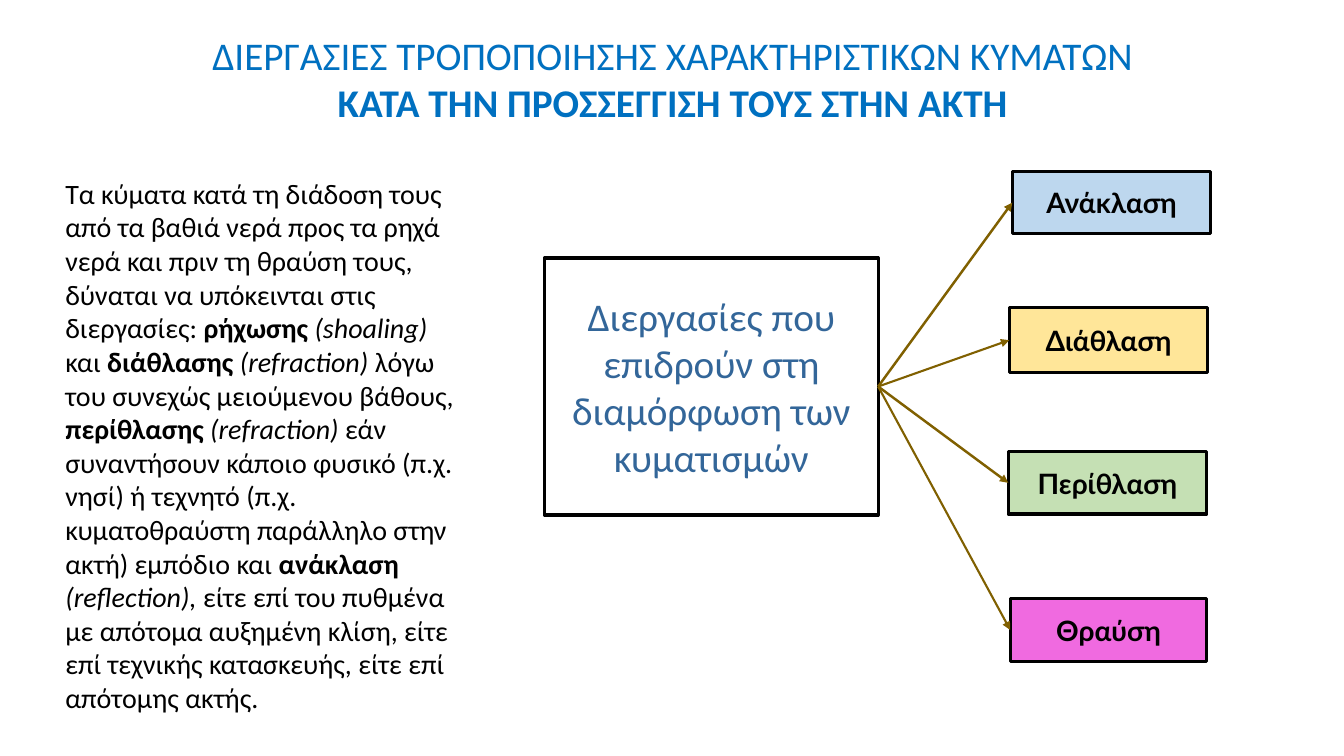
"""Build a slide on the processes that modify waves approaching the coast."""
from lxml.etree import SubElement
from pptx import Presentation
from pptx.dml.color import RGBColor
from pptx.enum.shapes import MSO_CONNECTOR as Connector, MSO_SHAPE as Shape
from pptx.enum.text import MSO_ANCHOR as Anchor, MSO_AUTO_SIZE as AutoSize, PP_ALIGN as Align
from pptx.oxml.ns import qn
from pptx.util import Inches, Pt

BLACK, BLUE, STEEL, BROWN, WHITE = "000000", "0070C0", "336699", "806000", "FFFFFF"
BODY_FONT, LABEL_FONT = "Calibri", "Lato"
RIGHT_SIDE, LEFT_SIDE = 3, 1

TITLE = [
    ("ΔΙΕΡΓΑΣΙΕΣ ΤΡΟΠΟΠΟΙΗΣΗΣ ΧΑΡΑΚΤΗΡΙΣΤΙΚΩΝ ΚΥΜΑΤΩΝ ", {}),
    ("ΚΑΤΑ ΤΗΝ ΠΡΟΣΣΕΓΓΙΣΗ ΤΟΥΣ ΣΤΗΝ ΑΚΤΗ", {"bold": True}),
]
EXPLANATION = [
    ("Τα κύματα κατά τη διάδοση τους από τα βαθιά νερά προς τα ρηχά νερά και πριν τη "
     "θραύση τους, δύναται να υπόκεινται στις διεργασίες: ", {}),
    ("ρήχωσης ", {"bold": True}),
    ("(shoaling) ", {"italic": True}),
    ("και ", {}),
    ("διάθλασης ", {"bold": True}),
    ("(refraction)", {"italic": True}),
    (" λόγω του συνεχώς μειούμενου βάθους, ", {}),
    ("περίθλασης ", {"bold": True}),
    ("(refraction)", {"italic": True}),
    (" εάν συναντήσουν κάποιο φυσικό (π.χ. νησί) ή τεχνητό (π.χ. κυματοθραύστη "
     "παράλληλο στην ακτή) εμπόδιο και ", {}),
    ("ανάκλαση ", {"bold": True}),
    ("(reflection), ", {"italic": True}),
    ("είτε επί του πυθμένα με απότομα αυξημένη κλίση, είτε επί τεχνικής κατασκευής, "
     "είτε επί απότομης ακτής.", {}),
]
CAUSE = "Διεργασίες που επιδρούν στη διαμόρφωση των κυματισμών"
PROCESSES = [
    ("Ανάκλαση", (10.04, 1.7, 1.97, 0.62), "BDD7EE", 1.75),
    ("Διάθλαση", (10.01, 3.05, 1.97, 0.65), "FFE699", 1.5),
    ("Περίθλαση", (10, 4.48, 1.97, 0.62), "C5E0B4", 1.75),
    ("Θραύση", (10.02, 5.94, 1.95, 0.62), "F06AE0", 1.5),
]


def color(value):
    return RGBColor.from_string(value)


def apply(target, values):
    for name, value in values.items():
        setattr(target, name, value)


def write(shape, spans, font, size, ink, align, frame):
    apply(shape.text_frame, {"word_wrap": True, **frame})
    para = shape.text_frame.paragraphs[0]
    para.alignment = align
    for text, style in spans:
        span = para.add_run()
        span.text = text
        apply(span.font, {"name": font, "size": Pt(size), "bold": False, **style})
        span.font.color.rgb = color(ink)


def add_box(page, text, bounds, fill, font, size, ink, bold):
    box = page.shapes.add_shape(Shape.RECTANGLE, *map(Inches, bounds))
    box.shadow.inherit = False
    box.fill.solid()
    box.fill.fore_color.rgb = color(fill)
    box.line.color.rgb = color(BLACK)
    box.line.width = Pt(2.25)
    write(box, [(text, {"bold": bold})], font, size, ink, Align.CENTER,
          {"vertical_anchor": Anchor.MIDDLE})
    return box


def add_arrow(page, start, end, width):
    arrow = page.shapes.add_connector(Connector.STRAIGHT, 0, 0, 0, 0)
    arrow.begin_connect(start, RIGHT_SIDE)
    arrow.end_connect(end, LEFT_SIDE)
    arrow.line.color.rgb = color(BROWN)
    arrow.line.width = Pt(width)
    SubElement(arrow.line._get_or_add_ln(), qn("a:tailEnd"), type="triangle")
    SubElement(arrow._element.spPr, qn("a:effectLst"))


def main():
    deck = Presentation()
    apply(deck, {"slide_width": Inches(13.33), "slide_height": Inches(7.5)})
    page = deck.slides.add_slide(deck.slide_layouts[5])
    page.background.fill.solid()
    page.background.fill.fore_color.rgb = color(WHITE)

    title = page.shapes.title
    apply(title, dict(zip(("left", "top", "width", "height"),
                          map(Inches, (1.76, 0, 9.82, 1.56)))))
    write(title, TITLE, BODY_FONT, 28, BLUE, Align.CENTER,
          {"vertical_anchor": Anchor.MIDDLE, "auto_size": AutoSize.NONE})

    prose = page.shapes.add_textbox(*map(Inches, (0.55, 1.7, 4.07, 5.49)))
    write(prose, EXPLANATION, BODY_FONT, 20, BLACK, Align.LEFT,
          {"auto_size": AutoSize.SHAPE_TO_FIT_TEXT})

    cause = add_box(page, CAUSE, (5.4, 2.56, 3.31, 2.55), WHITE, BODY_FONT, 28, STEEL, False)
    for label, bounds, fill, width in PROCESSES:
        process = add_box(page, label, bounds, fill, LABEL_FONT, 20, BLACK, True)
        add_arrow(page, cause, process, width)

    deck.save("out.pptx")


if __name__ == "__main__":
    main()
